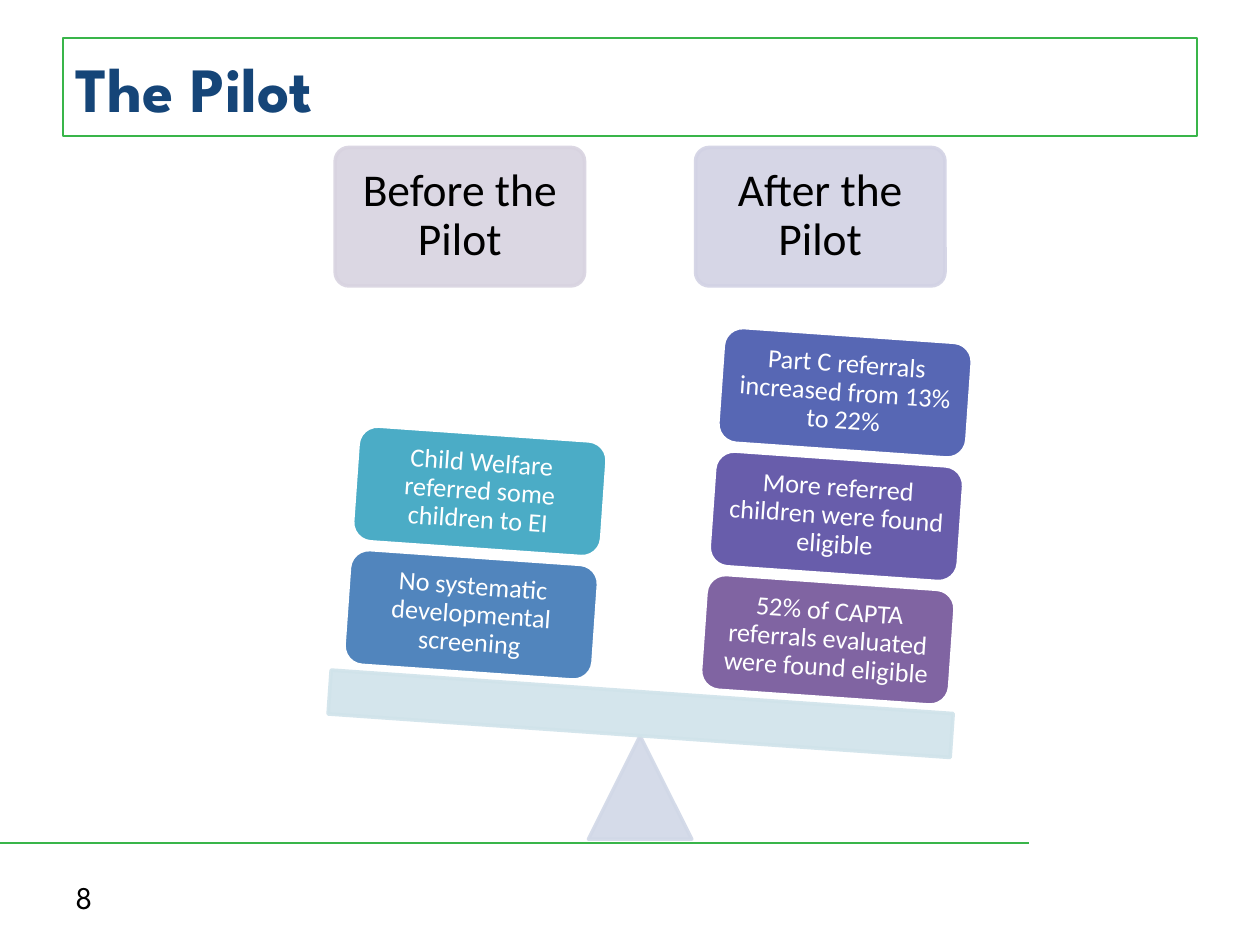
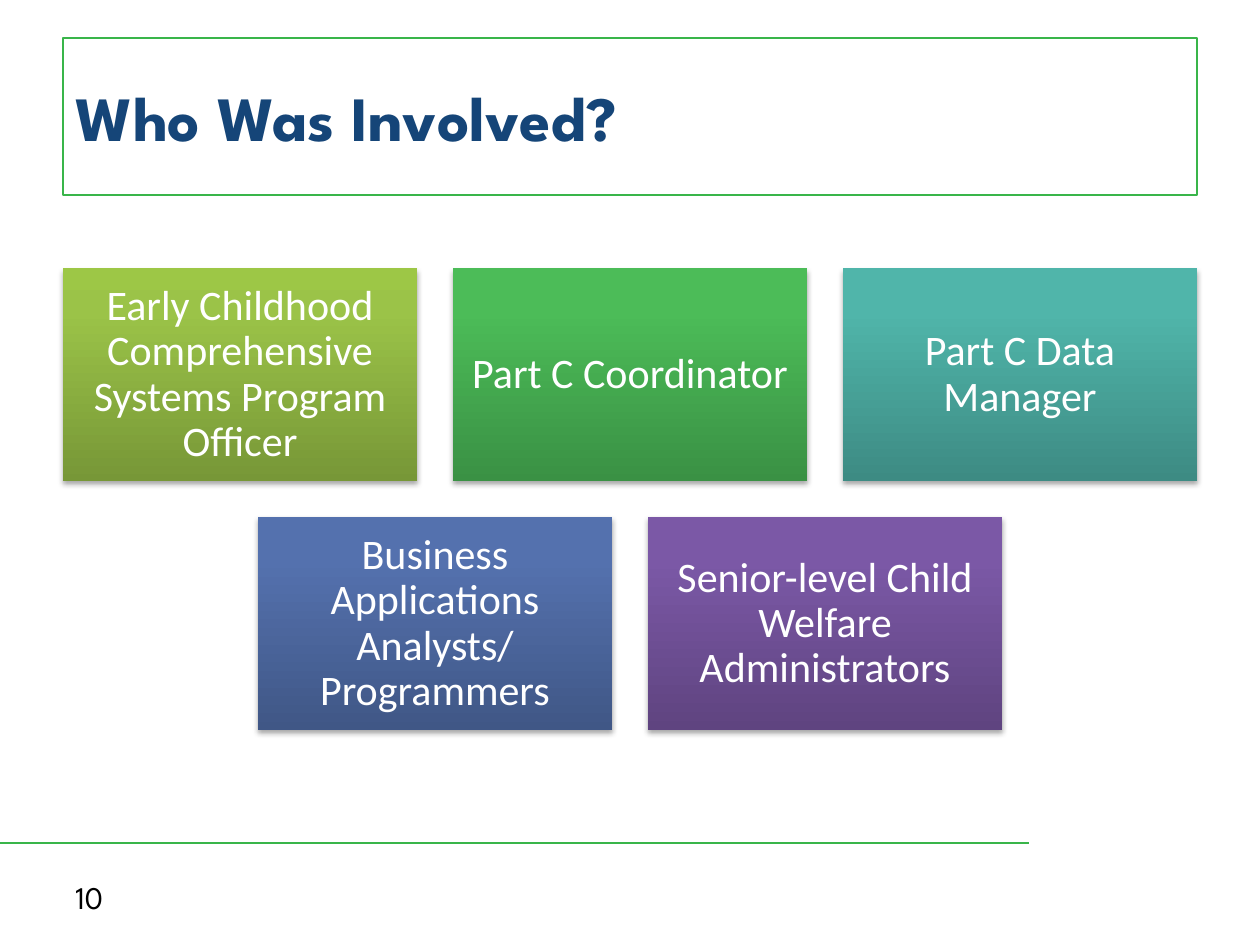
import math

import pptx
import pptx.dml.color
import pptx.enum.shapes
import pptx.enum.text
import pptx.oxml
import pptx.oxml.ns
import pptx.util

Inches, Pt = pptx.util.Inches, pptx.util.Pt
SHAPES = pptx.enum.shapes.MSO_SHAPE
ALIGN = pptx.enum.text.PP_ALIGN
MIDDLE = pptx.enum.text.MSO_ANCHOR.MIDDLE
qn = pptx.oxml.ns.qn

# ---- Content ----
PILOT = {"title": "The Pilot", "number": "8", "title_height": 0.78}
STACKS = [  # blocks run from the beam upward
    ("Before the Pilot", "before", [
        ("No systematic developmental screening", "5185BD"),
        ("Child Welfare referred some children to EI", "4BACC6"),
    ]),
    ("After the Pilot", "after", [
        ("52% of CAPTA referrals evaluated were found eligible", "8064A2"),
        ("More referred children were found eligible", "685DAB"),
        ("Part C referrals increased from 13% to 22%", "5767B4"),
    ]),
]

INVOLVED = {"title": "Who Was Involved?", "number": "10", "title_height": 1.25}
ROLE_ROWS = [  # gradients run from the bottom edge to the top
    [
        ("Early Childhood Comprehensive Systems Program Officer",
         ("779737", "9BC348", "9DC746")),
        ("Part C Coordinator", ("3A9144", "4CBC58", "4ABF57")),
        ("Part C Data Manager", ("3D8B83", "50B5AA", "4EB8AC")),
    ],
    [
        ("Business Applications Analysts/ Programmers",
         ("405786", "5471AE", "5271B0")),
        ("Senior-level Child Welfare Administrators",
         ("5F4480", "7B58A6", "7C57A8")),
    ],
]

# ---- Shared look ----
COLORS = {
    "green": "39B54A", "navy": "154578", "black": "000000", "white": "FFFFFF",
    "before": "D8D3E0", "after": "D2D2E4", "pivot": "D1D8E7", "beam": "D0E3EA",
}
HEADING_FONT, BODY_FONT = "League Spartan", "Calibri"
SLIDE_WIDTH, SLIDE_HEIGHT = 10, 7.5
MARGIN = 0.5
CONTENT_WIDTH = SLIDE_WIDTH - 2 * MARGIN
RULE_TOP, RULE_END = 6.69, 8.17
GRADIENT_STOPS = (0, 80, 100)


def rgb(color):
    return pptx.dml.color.RGBColor.from_string(color)


def write(shape, text, font, size, color, align=ALIGN.LEFT, inset=None, bold=False):
    frame = shape.text_frame
    frame.text = text
    frame.word_wrap = True
    frame.auto_size = pptx.enum.text.MSO_AUTO_SIZE.NONE
    frame.vertical_anchor = MIDDLE
    if inset is not None:
        frame.margin_left = frame.margin_right = Inches(inset)
        frame.margin_top = frame.margin_bottom = Inches(inset)
    paragraph = frame.paragraphs[0]
    paragraph.alignment = align
    for run in paragraph.runs:
        run.font.name, run.font.size, run.font.bold = font, Pt(size), bold
        run.font.color.rgb = rgb(color)


def write_centred(shape, text, size, color, inset):
    write(shape, text, BODY_FONT, size, color, ALIGN.CENTER, inset)
    shape.text_frame.paragraphs[0].line_spacing = 0.9


def add_box(slide, kind, left, top, width, height, fill=None, line=None, rotation=0):
    shape = slide.shapes.add_shape(
        kind, Inches(left), Inches(top), Inches(width), Inches(height))
    shape.shadow.inherit = False
    shape.rotation = rotation
    if fill:
        shape.fill.solid()
        shape.fill.fore_color.rgb = rgb(fill)
    if line:
        shape.line.color.rgb = rgb(line)
        shape.line.width = Pt(2)
    else:
        shape.line.fill.background()
    return shape


def append_xml(parent, tag, **attributes):
    child = parent.makeelement(qn(tag), attributes)
    parent.append(child)
    return child


def add_pale_box(slide, kind, left, top, width, height, color, rotation=0):
    shape = add_box(slide, kind, left, top, width, height, color, color, rotation)
    for element in shape._element.spPr.iter(qn("a:srgbClr")):
        append_xml(element, "a:alpha", val="90000")
    return shape


def shade(shape, colors):
    """Gradient from the bottom edge up, with a soft shadow below."""
    shape.fill.gradient()
    shape.fill.gradient_angle = 90
    properties = shape._element.spPr
    stops = next(properties.iter(qn("a:gsLst")))
    stops.clear()
    for position, color in zip(GRADIENT_STOPS, colors):
        stop = append_xml(stops, "a:gs", pos=str(position * 1000))
        append_xml(stop, "a:srgbClr", val=color)
    effects = properties.find(qn("a:effectLst"))
    shadow = append_xml(effects, "a:outerShdw", blurRad=str(Pt(3.1)),
                        dist=str(Pt(1.8)), dir="5400000", rotWithShape="0")
    shadow_color = append_xml(shadow, "a:srgbClr", val=COLORS["black"])
    append_xml(shadow_color, "a:alpha", val="35000")


def add_slide(presentation, content):
    """Framed title, green rule and slide number."""
    slide = presentation.slides.add_slide(presentation.slide_layouts[5])
    title = slide.shapes.title
    title.left, title.top = Inches(MARGIN), Inches(0.3)
    title.width, title.height = Inches(CONTENT_WIDTH), Inches(content["title_height"])
    title.line.color.rgb = rgb(COLORS["green"])
    title.line.width = Pt(1)
    write(title, content["title"], HEADING_FONT, 36, COLORS["navy"], bold=True)

    rule = slide.shapes.add_connector(
        pptx.enum.shapes.MSO_CONNECTOR.STRAIGHT,
        0, Inches(RULE_TOP), Inches(RULE_END), Inches(RULE_TOP))
    rule.line.color.rgb = rgb(COLORS["green"])
    rule.line.width = Pt(1.5)
    append_xml(rule._element.spPr, "a:effectLst")

    number = slide.shapes.add_textbox(
        Inches(MARGIN), Inches(6.92), Inches(2.33), Inches(0.4))
    write(number, content["number"], HEADING_FONT, 18, COLORS["black"])
    return slide


def build_pilot(presentation):
    slide = add_slide(presentation, PILOT)
    tilt = 4
    slope = math.tan(math.radians(tilt))
    block_width, block_height, block_step = 1.98, 0.92, 0.98
    first_left, first_top, stack_gap = 2.75, 4.42, 2.83

    # Scale
    add_pale_box(slide, SHAPES.ISOSCELES_TRIANGLE, 4.67, 5.84, 0.82, 0.82,
                 COLORS["pivot"])
    add_pale_box(slide, SHAPES.RECTANGLE, 2.61, 5.49, 4.95, 0.35,
                 COLORS["beam"], tilt)

    # Headings, with blocks stacked at right angles to the beam
    for column, (heading, tint, blocks) in enumerate(STACKS):
        header = add_pale_box(slide, SHAPES.ROUNDED_RECTANGLE, 2.66 + column * 2.86,
                              1.17, block_width, 1.1, COLORS[tint])
        header.adjustments[0] = 0.1
        write_centred(header, heading, 26, COLORS["black"], 0.11)
        stack_left = first_left + column * stack_gap
        stack_top = first_top + column * stack_gap * slope
        for level, (text, color) in enumerate(blocks):
            rise = level * block_step
            block = add_box(slide, SHAPES.ROUNDED_RECTANGLE,
                            stack_left + rise * slope, stack_top - rise,
                            block_width, block_height, color, COLORS["white"], tilt)
            write_centred(block, text, 15, COLORS["white"], 0.06)


def build_involved(presentation):
    slide = add_slide(presentation, INVOLVED)
    card_width, card_height, first_top = 2.81, 1.69, 2.13
    gap = (CONTENT_WIDTH - 3 * card_width) / 2

    # Centred rows of cards
    for row, roles in enumerate(ROLE_ROWS):
        row_width = len(roles) * (card_width + gap) - gap
        row_left = (SLIDE_WIDTH - row_width) / 2
        for column, (text, colors) in enumerate(roles):
            card = add_box(slide, SHAPES.RECTANGLE,
                           row_left + column * (card_width + gap),
                           first_top + row * (card_height + gap),
                           card_width, card_height)
            shade(card, colors)
            write_centred(card, text, 24, COLORS["white"], 0.1)


def main():
    presentation = pptx.Presentation()
    presentation.slide_width = Inches(SLIDE_WIDTH)
    presentation.slide_height = Inches(SLIDE_HEIGHT)
    build_pilot(presentation)
    build_involved(presentation)
    presentation.save("out.pptx")


if __name__ == "__main__":
    main()
